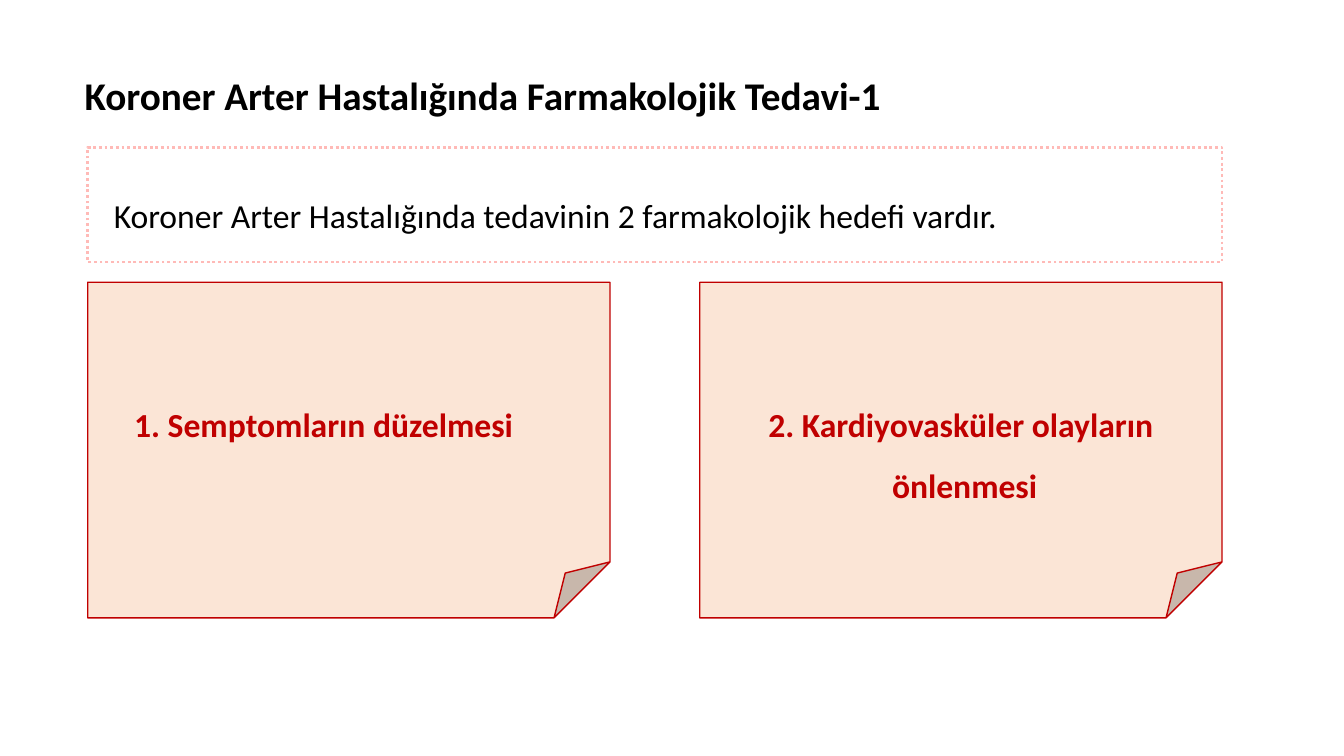
import pptx
import pptx.util
from pptx.dml.color import RGBColor
from pptx.enum.dml import MSO_LINE
from pptx.enum.shapes import MSO_SHAPE
from pptx.enum.text import MSO_AUTO_SIZE, PP_ALIGN

BLACK = RGBColor(0x00, 0x00, 0x00)
WHITE = RGBColor(0xFF, 0xFF, 0xFF)
RED = RGBColor(0xC0, 0x00, 0x00)
PINK = RGBColor(0xFF, 0xBA, 0xB7)
PEACH = RGBColor(0xFB, 0xE5, 0xD6)

# Content grid: two columns with a gutter, in inches
SLIDE_WIDTH, SLIDE_HEIGHT = 13.33, 7.5
LEFT, COLUMN, GUTTER = 0.87, 5.18, 0.89
CONTENT_WIDTH = 2 * COLUMN + GUTTER


def inches(box):
    return [pptx.util.Inches(length) for length in box]


def add_text(shapes, box, lines, size=24, color=BLACK, bold=False,
             align=PP_ALIGN.LEFT, spacing=1.5, wrap=True):
    frame = shapes.add_textbox(*inches(box)).text_frame
    frame.word_wrap = wrap
    frame.auto_size = MSO_AUTO_SIZE.SHAPE_TO_FIT_TEXT
    for index, line in enumerate(lines):
        paragraph = frame.paragraphs[0] if index == 0 else frame.add_paragraph()
        paragraph.text = line
        paragraph.alignment = align
        paragraph.line_spacing = spacing
        paragraph.font.name = "Calibri"
        paragraph.font.size = pptx.util.Pt(size)
        paragraph.font.bold = bold
        paragraph.font.color.rgb = color


def add_panel(shapes, preset, box, fill, line, line_width):
    panel = shapes.add_shape(preset, *inches(box))
    panel.shadow.inherit = False
    panel.fill.solid()
    panel.fill.fore_color.rgb = fill
    panel.line.color.rgb = line
    panel.line.width = pptx.util.Pt(line_width)
    return panel


def add_title(slide, box, title):
    add_text(slide.shapes, box, [title], size=28, bold=True, spacing=1.0)


def add_statement(slide, box, statement):
    left, top, width, height = box
    shapes = slide.shapes.add_group_shape().shapes
    border = add_panel(shapes, MSO_SHAPE.RECTANGLE, box, WHITE, PINK, 2)
    border.line.dash_style = MSO_LINE.ROUND_DOT
    add_text(shapes, (left + 0.16, top + 0.22, width - 0.46, 0.64), [statement])


def add_goal(slide, box, lines, text_width, shift=0):
    """Folded note; shift moves its text off the note's centre."""
    left, top, width, height = box
    shapes = slide.shapes.add_group_shape().shapes
    add_panel(shapes, MSO_SHAPE.FOLDED_CORNER, box, PEACH, RED, 1)
    text_left = left + (width - text_width) / 2 + shift
    add_text(shapes, (text_left, top + 0.96, text_width, 0.62 * len(lines)),
             lines, color=RED, bold=True, align=PP_ALIGN.CENTER, wrap=False)


def build_goals_slide(deck):
    slide = deck.slides.add_slide(deck.slide_layouts[6])
    add_title(slide, (0.74, 0.66, 10, 0.57),
              "Koroner Arter Hastalığında Farmakolojik Tedavi-1")
    add_statement(slide, (LEFT, 1.46, CONTENT_WIDTH, 1.14),
                  "Koroner Arter Hastalığında tedavinin 2 farmakolojik hedefi vardır.")

    # One note per treatment goal
    goals = [
        (["1. Semptomların düzelmesi"], 4, -0.25),
        (["2. Kardiyovasküler olayların", " önlenmesi"], 4.06, 0),
    ]
    for column, (lines, text_width, shift) in enumerate(goals):
        note = (LEFT + column * (COLUMN + GUTTER), 2.8, COLUMN, 3.33)
        add_goal(slide, note, lines, text_width, shift)


def main():
    deck = pptx.Presentation()
    deck.slide_width = pptx.util.Inches(SLIDE_WIDTH)
    deck.slide_height = pptx.util.Inches(SLIDE_HEIGHT)
    build_goals_slide(deck)
    deck.save("out.pptx")


if __name__ == "__main__":
    main()
